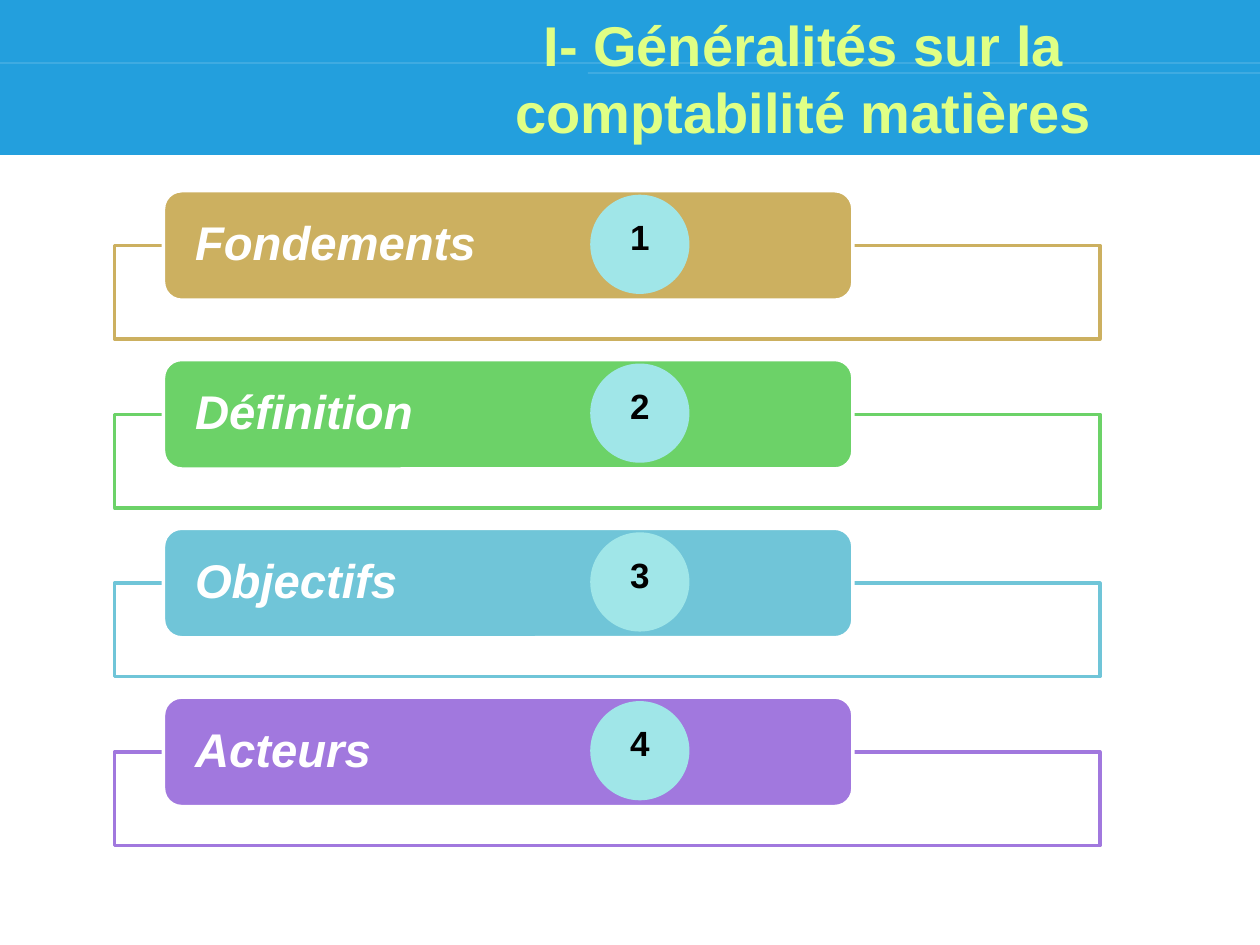
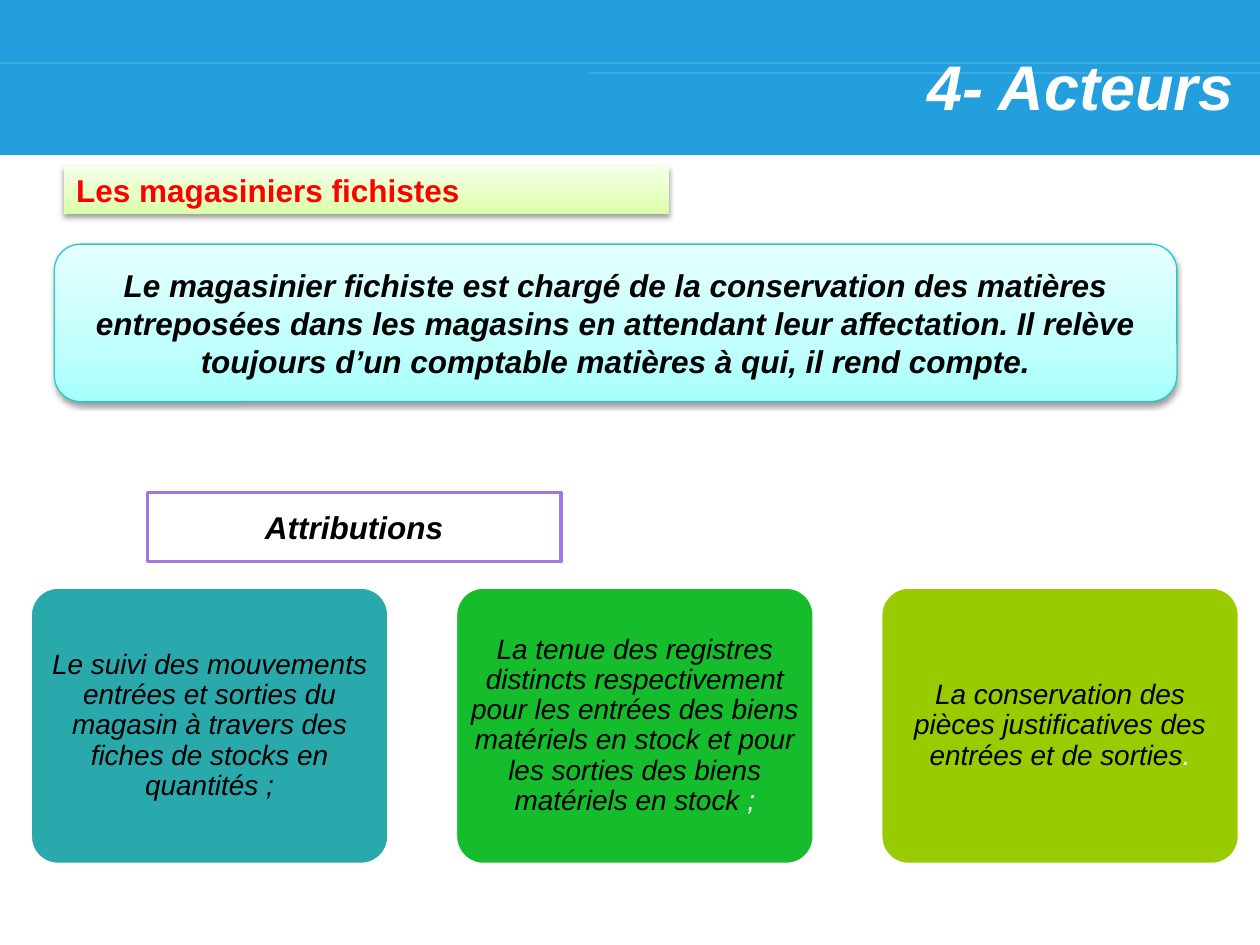
from lxml import etree
from pptx import Presentation
from pptx.dml.color import RGBColor
from pptx.enum.shapes import MSO_CONNECTOR, MSO_SHAPE
from pptx.enum.text import MSO_ANCHOR as Anchor, PP_ALIGN as Align
from pptx.oxml import parse_xml
from pptx.oxml.ns import nsdecls, qn
from pptx.util import Pt

FONT = "Arial"
WHITE, BLACK = RGBColor(255, 255, 255), RGBColor(0, 0, 0)
RED = RGBColor(255, 0, 0)
BAND_BLUE = RGBColor(0x23, 0x9F, 0xDD)
TITLE_LIME = RGBColor(0xE0, 0xFF, 0x85)
BADGE_AQUA = RGBColor(0xA0, 0xE6, 0xE8)
GOLD = RGBColor(0xCC, 0xB0, 0x60)
GREEN = RGBColor(0x6C, 0xD2, 0x68)
SKY = RGBColor(0x70, 0xC5, 0xD8)
PURPLE = RGBColor(0xA1, 0x78, 0xDE)
TEAL = RGBColor(0x2A, 0xA9, 0xAC)
TEAL_EDGE = RGBColor(0x2C, 0xC8, 0xC4)
EMERALD = RGBColor(0x15, 0xBC, 0x2B)
LIME = RGBColor(0x99, 0xCC, 0x00)

# Gradient stops run from bottom to top
AQUA_GRADIENT = [(0, "A6FFFB"), (35, "C0FFFC"), (100, "E7FFFE")]
LIME_GRADIENT = [(0, "DAFFA6"), (35, "E5FFC0"), (100, "F6FFE7")]

SLIDE_WIDTH, SLIDE_HEIGHT = 720, 540
BAND_HEIGHT = 88.5
BAND_LINES = [(0, 36), (336, 41.76)]  # left end, height on the slide

TITLE = "I- Généralités sur la comptabilité matières"
TOPICS = [("Fondements", GOLD), ("Définition", GREEN), ("Objectifs", SKY), ("Acteurs", PURPLE)]
TOPIC_TOP, TOPIC_STEP = 109, 96.45

SECTION = "4- Acteurs"
ROLE = "Les magasiniers fichistes"
ROLE_TEXT = (
    "Le magasinier fichiste est chargé de la conservation des matières entreposées "
    "dans les magasins en attendant leur affectation. Il relève toujours d’un "
    "comptable matières à qui, il rend compte."
)
DUTIES_HEADING = "Attributions"
DUTIES = [  # fill, text, white ending
    (TEAL, "Le suivi des mouvements entrées et sorties du magasin à travers des "
           "fiches de stocks en quantités ;", ""),
    (EMERALD, "La tenue des registres distincts respectivement pour les entrées des "
              "biens matériels en stock et pour les sorties des biens matériels en stock", " ;"),
    (LIME, "La conservation des pièces justificatives des entrées et de sorties", "."),
]
DUTY_LEFT, DUTY_STEP = 17.3, 243


def write(shape, runs, size, align=Align.CENTER, anchor=Anchor.MIDDLE,
          bold=True, italic=False, margins=(7.2, 3.6), spacing=None):
    """Fill a shape with one paragraph; runs are (text, colour) pairs."""
    frame = shape.text_frame
    frame.word_wrap = True
    frame.vertical_anchor = anchor
    frame.margin_left = frame.margin_right = Pt(margins[0])
    frame.margin_top = frame.margin_bottom = Pt(margins[1])
    paragraph = frame.paragraphs[0]
    paragraph.alignment = align
    if spacing:
        paragraph.line_spacing = spacing
    for text, colour in runs:
        run = paragraph.add_run()
        run.text = text
        font = run.font
        font.name, font.size, font.bold, font.italic = FONT, Pt(size), bold, italic
        font.color.rgb = colour


def add_shape(slide, kind, box, fill=None, line=None, line_width=2):
    shape = slide.shapes.add_shape(kind, *map(Pt, box))
    shape.shadow.inherit = False
    if fill is not None:
        shape.fill.solid()
        shape.fill.fore_color.rgb = fill
    if line is None:
        shape.line.fill.background()
    else:
        shape.line.color.rgb = line
        shape.line.width = Pt(line_width)
    return shape


def add_text(slide, box, text, colour, size, **style):
    write(slide.shapes.add_textbox(*map(Pt, box)), [(text, colour)], size, **style)


def raise_with_gradient(shape, stops):
    """Give a shape a vertical gradient and a soft shadow below it."""
    properties = shape._element.spPr
    stop_xml = "".join(
        f'<a:gs pos="{position * 1000}"><a:srgbClr val="{colour}"/></a:gs>'
        for position, colour in stops
    )
    properties.find(qn("a:prstGeom")).addnext(parse_xml(
        f'<a:gradFill {nsdecls("a")} rotWithShape="1"><a:gsLst>{stop_xml}</a:gsLst>'
        '<a:lin ang="16200000" scaled="0"/></a:gradFill>'
    ))
    properties.find(qn("a:effectLst")).append(parse_xml(
        f'<a:outerShdw {nsdecls("a")} blurRad="{Pt(3.1)}" dist="{Pt(1.6)}" dir="5400000" '
        'rotWithShape="0"><a:srgbClr val="000000"><a:alpha val="38000"/></a:srgbClr>'
        '</a:outerShdw>'
    ))


def add_banded_slide(presentation):
    slide = presentation.slides.add_slide(presentation.slide_layouts[6])
    add_shape(slide, MSO_SHAPE.RECTANGLE, (0, 0, SLIDE_WIDTH, BAND_HEIGHT), BAND_BLUE)
    for left, height in BAND_LINES:
        line = slide.shapes.add_connector(
            MSO_CONNECTOR.STRAIGHT, Pt(left), Pt(height), Pt(SLIDE_WIDTH), Pt(height))
        line.line.color.rgb = WHITE
        line.line.width = Pt(0.75)
        properties = line._element.spPr
        colour = properties.find(".//" + qn("a:srgbClr"))
        etree.SubElement(colour, qn("a:alpha")).set("val", "20000")
        etree.SubElement(properties, qn("a:effectLst"))
    return slide


def build_overview(presentation):
    slide = add_banded_slide(presentation)
    add_text(slide, (206.6, 0, 505.4, BAND_HEIGHT), TITLE, TITLE_LIME, 32)
    for index, (topic, colour) in enumerate(TOPICS):
        top = TOPIC_TOP + index * TOPIC_STEP
        add_shape(slide, MSO_SHAPE.RECTANGLE, (65.5, top + 31.3, 563, 53.5), WHITE, colour)
        bar = add_shape(slide, MSO_SHAPE.ROUNDED_RECTANGLE, (93.4, top, 394, 62.6), colour, WHITE)
        write(bar, [(topic, WHITE)], 27, Align.LEFT, italic=True, margins=(15, 0), spacing=0.9)
        badge = add_shape(slide, MSO_SHAPE.OVAL, (337.3, top + 2.3, 56.7, 56.7), BADGE_AQUA)
        write(badge, [(str(index + 1), BLACK)], 20, anchor=Anchor.TOP)


def build_actors(presentation):
    slide = add_banded_slide(presentation)
    role = add_shape(slide, MSO_SHAPE.RECTANGLE, (36.5, 95, 346, 27.6))
    raise_with_gradient(role, LIME_GRADIENT)
    write(role, [(ROLE, RED)], 18, Align.LEFT)

    for index, (fill, text, ending) in enumerate(DUTIES):
        card = add_shape(slide, MSO_SHAPE.ROUNDED_RECTANGLE,
                         (DUTY_LEFT + index * DUTY_STEP, 335.5, 205, 158.5), fill, WHITE)
        card.adjustments[0] = 0.1
        runs = [(text, BLACK)] + ([(ending, WHITE)] if ending else [])
        write(card, runs, 16, bold=False, italic=True, margins=(2.2, 1.5), spacing=0.9)

    definition = add_shape(slide, MSO_SHAPE.ROUNDED_RECTANGLE, (31, 139.5, 641.5, 90),
                           line=TEAL_EDGE, line_width=0.75)
    raise_with_gradient(definition, AQUA_GRADIENT)
    write(definition, [(ROLE_TEXT, BLACK)], 18, italic=True)

    heading = add_shape(slide, MSO_SHAPE.RECTANGLE, (84.2, 281.4, 236.4, 39.6), WHITE, PURPLE)
    write(heading, [(DUTIES_HEADING, BLACK)], 18, italic=True)
    add_text(slide, (473, 17.5, 239, 62.6), SECTION, WHITE, 36, align=Align.RIGHT, italic=True)


def main():
    presentation = Presentation()
    presentation.slide_width, presentation.slide_height = Pt(SLIDE_WIDTH), Pt(SLIDE_HEIGHT)
    build_overview(presentation)
    build_actors(presentation)
    presentation.save("out.pptx")


if __name__ == "__main__":
    main()
